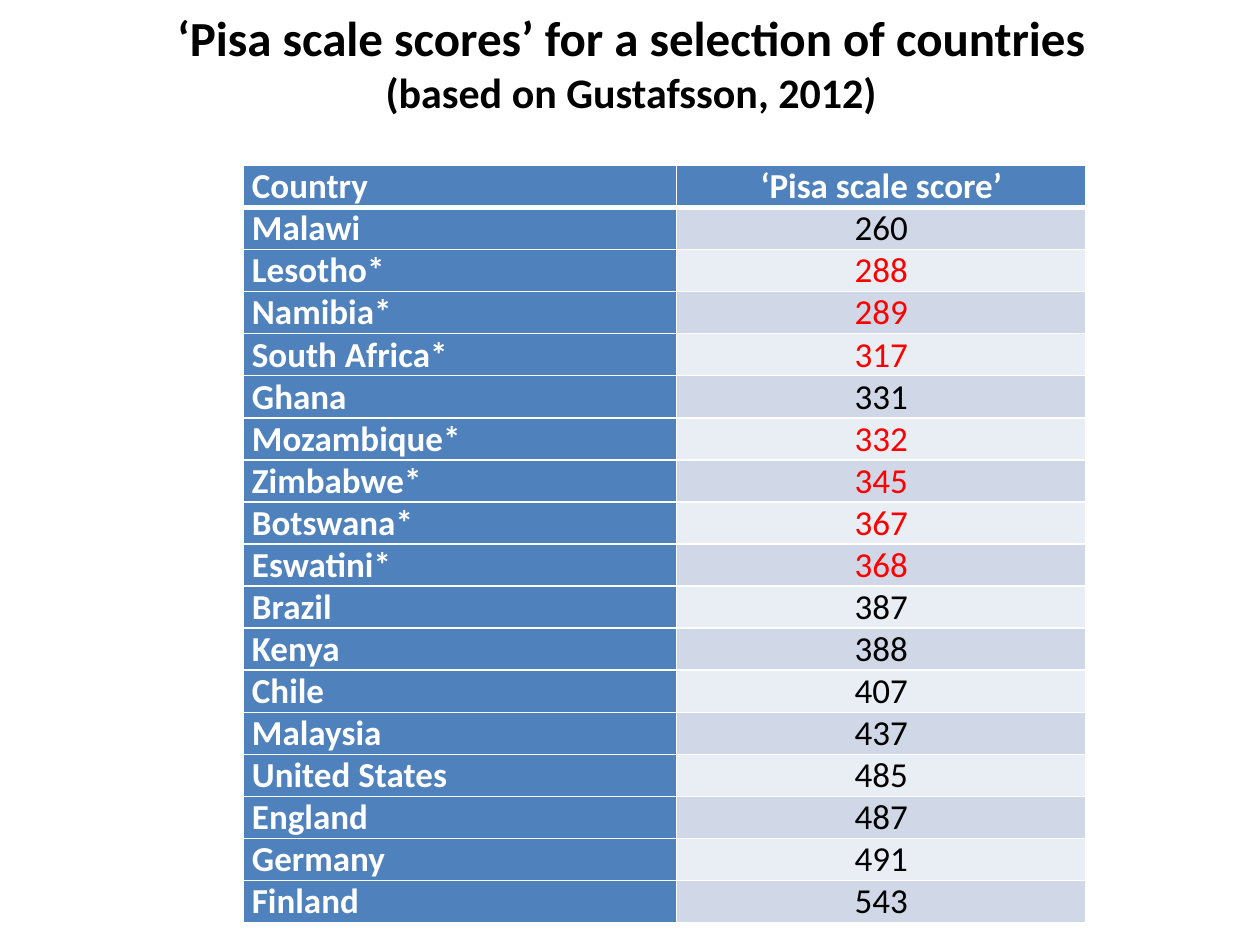
from lxml.etree import SubElement
from pptx import Presentation
from pptx.dml.color import RGBColor
from pptx.enum.text import MSO_ANCHOR, PP_ALIGN
from pptx.oxml.ns import qn
from pptx.util import Inches, Pt

WHITE = RGBColor(0xFF, 0xFF, 0xFF)
BLACK = RGBColor(0, 0, 0)
RED = RGBColor(0xFF, 0, 0)
BLUE = RGBColor(0x4F, 0x81, 0xBD)
BANDS = (RGBColor(0xD0, 0xD8, 0xE8), RGBColor(0xE9, 0xED, 0xF4))

WIDE, HIGH = Inches(10), Inches(7.5)
COLS = (0.344, 0.325)  # shares of the slide's width
ROW = 0.04  # share of the slide's height

HEAD = ("Country", "‘Pisa scale score’")
# Countries with a star have their score in red
SCORES = {
    "Malawi": 260, "Lesotho*": 288, "Namibia*": 289, "South Africa*": 317,
    "Ghana": 331, "Mozambique*": 332, "Zimbabwe*": 345, "Botswana*": 367,
    "Eswatini*": 368, "Brazil": 387, "Kenya": 388, "Chile": 407,
    "Malaysia": 437, "United States": 485, "England": 487, "Germany": 491,
    "Finland": 543,
}


def set_all(item, values):
    for name, value in values.items():
        setattr(item, name, value)


def add_run(para, text, size, color, bold):
    run = para.add_run()
    run.text = text
    set_all(run.font, {"name": "Calibri", "size": Pt(size), "bold": bold})
    run.font.color.rgb = color


def add_title(slide):
    box = slide.shapes.add_textbox(
        int(WIDE * 0.001), int(HIGH * 0.001), WIDE, int(HIGH * 0.13))
    set_all(box.text_frame, {"word_wrap": True,
                             "vertical_anchor": MSO_ANCHOR.MIDDLE})
    para = box.text_frame.paragraphs[0]
    para.alignment = PP_ALIGN.CENTER
    add_run(para, "‘Pisa scale scores’ for a selection of countries",
            28, BLACK, True)
    para.add_line_break()
    add_run(para, "(based on Gustafsson, 2012)", 24, BLACK, True)


def add_edges(cell, widths):
    props = cell._tc.get_or_add_tcPr()
    for side, width in widths.items():
        line = SubElement(props, qn(f"a:ln{side}"), w=str(Pt(width)))
        fill = SubElement(line, qn("a:solidFill"))
        SubElement(fill, qn("a:srgbClr"), val=str(WHITE))


def fill_cell(cell, text, back, color, bold, align, edges):
    add_edges(cell, edges)
    cell.fill.solid()
    cell.fill.fore_color.rgb = back
    set_all(cell, {"margin_left": Inches(0.07), "margin_right": Inches(0.07),
                   "margin_top": 0, "margin_bottom": 0})
    para = cell.text_frame.paragraphs[0]
    para.alignment = align
    add_run(para, text, 20, color, bold)


def add_scores(slide):
    rows = [HEAD, *SCORES.items()]
    table = slide.shapes.add_table(
        len(rows), len(COLS), int(WIDE * 0.193), int(HIGH * 0.175),
        int(WIDE * sum(COLS)), int(HIGH * ROW * len(rows))).table
    for col, share in zip(table.columns, COLS):
        col.width = int(WIDE * share)

    for i, (land, score) in enumerate(rows):
        top = i == 0
        table.rows[i].height = int(HIGH * ROW)
        # A thick line parts the header from the body
        edges = {"L": 1, "R": 1, "T": 3 if i == 1 else 1, "B": 3 if top else 1}
        back = BLUE if top else BANDS[(i - 1) % 2]
        color = WHITE if top else RED if land.endswith("*") else BLACK
        fill_cell(table.cell(i, 0), land, BLUE, WHITE, True,
                  PP_ALIGN.LEFT, edges)
        fill_cell(table.cell(i, 1), str(score), back, color, top,
                  PP_ALIGN.CENTER, edges)


def main():
    deck = Presentation()
    set_all(deck, {"slide_width": WIDE, "slide_height": HIGH})
    slide = deck.slides.add_slide(deck.slide_layouts[6])
    add_title(slide)
    add_scores(slide)
    deck.save("out.pptx")


if __name__ == "__main__":
    main()
